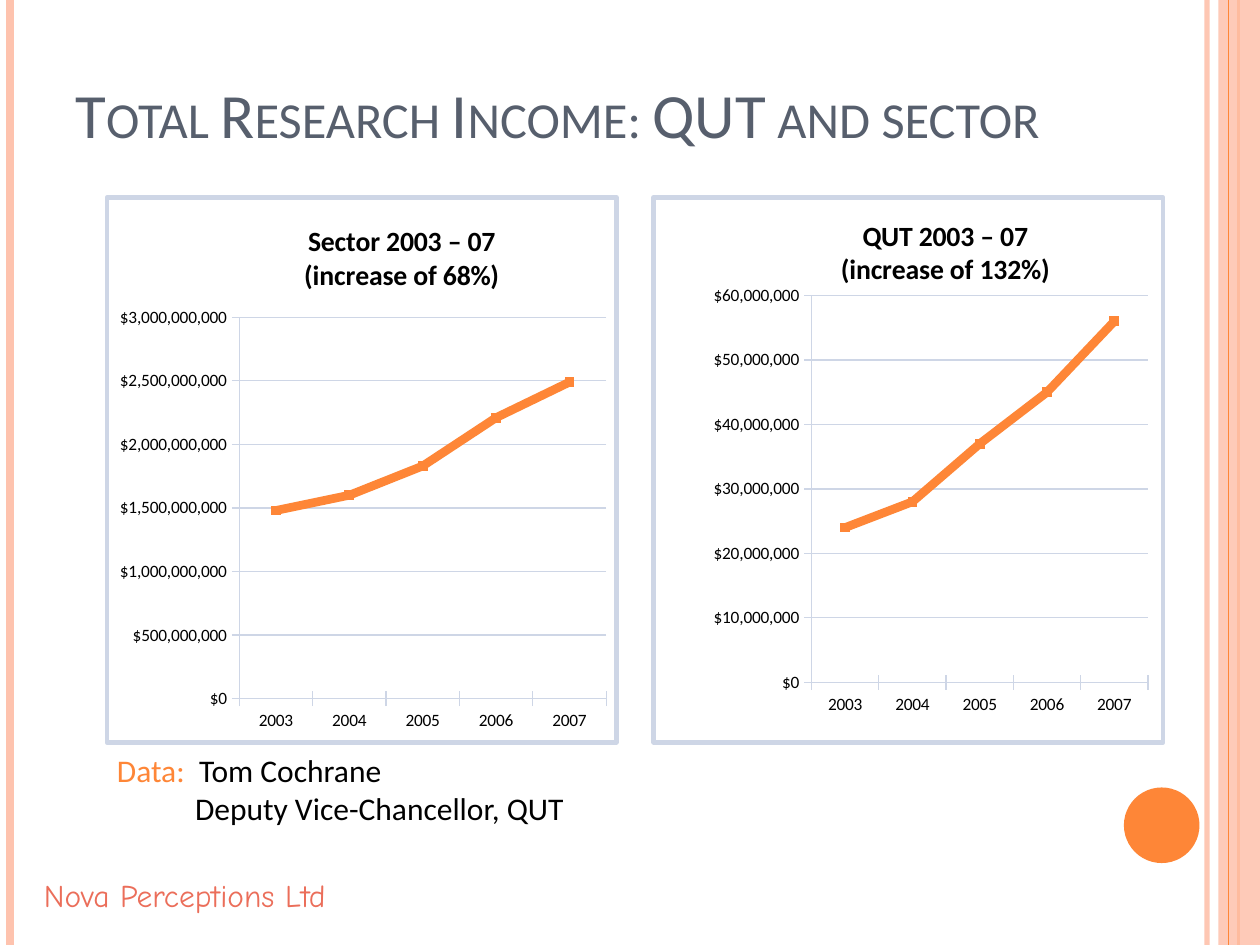
from dataclasses import dataclass

from lxml import etree
from pptx import Presentation
from pptx.chart.data import CategoryChartData
from pptx.dml.color import RGBColor
from pptx.enum.chart import XL_CHART_TYPE, XL_MARKER_STYLE, XL_TICK_MARK
from pptx.enum.shapes import MSO_CONNECTOR, MSO_SHAPE
from pptx.enum.text import MSO_ANCHOR
from pptx.oxml import parse_xml
from pptx.oxml.ns import nsdecls, qn
from pptx.util import Inches, Pt

LINE_MARKERS = XL_CHART_TYPE.LINE_MARKERS
SQUARE = XL_MARKER_STYLE.SQUARE
CROSS = XL_TICK_MARK.CROSS
STRAIGHT = MSO_CONNECTOR.STRAIGHT
RECT, OVAL = MSO_SHAPE.RECTANGLE, MSO_SHAPE.OVAL
TOP, BOTTOM = MSO_ANCHOR.TOP, MSO_ANCHOR.BOTTOM

WIDTH, HEIGHT = 10, 7.5
# Chart row: two equal columns
CHART_LEFT, CHART_TOP, CHART_W, CHART_H, GUTTER = 0.83, 1.55, 4.08, 4.36, 0.26
YEARS = ["2003", "2004", "2005", "2006", "2007"]


@dataclass(frozen=True)
class Theme:
    accent: str = "FE8637"
    pale: str = "FEC3AE"
    rule: str = "CED6E6"
    heading: str = "575F6D"
    text: str = "000000"
    footer: str = "EB6E5A"
    font: str = "Calibri"
    footer_font: str = "Comic Neue"
    heading_size: int = 36
    body_size: int = 18
    chart_title_size: int = 16
    chart_size: int = 10


THEME = Theme()


def rgb(color):
    return RGBColor.from_string(color)


def set_alpha(sp, percent):
    color = sp._element.spPr.find(".//" + qn("a:srgbClr"))
    etree.SubElement(color, qn("a:alpha"), val=str(percent * 1000))


def style_line(line, color, width):
    line.color.rgb = rgb(color)
    line.width = Pt(width)


def style_font(font, size, color, name=THEME.font, bold=False):
    font.size, font.name, font.bold = Pt(size), name, bold
    font.color.rgb = rgb(color)


def add_stripe(s, x, color, width, alpha=None):
    """Vertical line over the full slide height."""
    line = s.shapes.add_connector(STRAIGHT, Inches(x), 0, Inches(x), Inches(HEIGHT))
    style_line(line.line, color, width)
    if alpha:
        set_alpha(line, alpha)
    etree.SubElement(line._element.spPr, qn("a:effectLst"))


def add_block(s, kind, box, color):
    sp = s.shapes.add_shape(kind, *map(Inches, box))
    sp.shadow.inherit = False
    sp.fill.solid()
    sp.fill.fore_color.rgb = rgb(color)
    sp.line.fill.background()
    return sp


def add_text(s, box, lines, size, font=THEME.font, anchor=TOP):
    """Each line is a list of (text, color) runs."""
    tf = s.shapes.add_textbox(*map(Inches, box)).text_frame
    tf.word_wrap = True
    tf.vertical_anchor = anchor
    for i, runs in enumerate(lines):
        p = tf.add_paragraph() if i else tf.paragraphs[0]
        for text, color in runs:
            r = p.add_run()
            r.text = text
            style_font(r.font, size, color, font)
    return tf


def set_layout(parent, target, **shares):
    """Place a chart part by shares of the chart's size."""
    for old in parent.findall(qn("c:layout")):
        parent.remove(old)
    layout = etree.Element(qn("c:layout"))
    manual = etree.SubElement(layout, qn("c:manualLayout"))
    if target:
        etree.SubElement(manual, qn("c:layoutTarget"), val=target)
    for mode in ("xMode", "yMode"):
        etree.SubElement(manual, qn("c:" + mode), val="edge")
    for key, share in shares.items():
        etree.SubElement(manual, qn("c:" + key), val=str(share))
    text = parent.find(qn("c:tx"))
    if text is None:
        parent.insert(0, layout)
    else:
        text.addnext(layout)


def add_chart_title(chart, lines, x, y):
    tf = chart.chart_title.text_frame
    for i, text in enumerate(lines):
        p = tf.add_paragraph() if i else tf.paragraphs[0]
        r = p.add_run()
        r.text = text
        style_font(r.font, THEME.chart_title_size, THEME.text, bold=True)
    chart.chart_title.include_in_layout = False
    set_layout(chart.chart_title._element, None, x=x, y=y)


def add_income_chart(s, column, title, values, top, step, title_at, plot):
    data = CategoryChartData(number_format='"$"#,##0')
    data.categories = YEARS
    data.add_series("Series 1", values)
    left = CHART_LEFT + column * (CHART_W + GUTTER)
    box = map(Inches, (left, CHART_TOP, CHART_W, CHART_H))
    chart = s.shapes.add_chart(LINE_MARKERS, *box, data).chart
    chart.has_legend = False
    style_font(chart.font, THEME.chart_size, THEME.text)
    add_chart_title(chart, title, *title_at)
    set_layout(chart._chartSpace.chart.plotArea, "inner", **plot)

    # Axes and gridlines
    for axis in (chart.category_axis, chart.value_axis):
        axis.major_tick_mark = CROSS
        style_line(axis.format.line, THEME.rule, 0.75)
    axis = chart.value_axis
    axis.minimum_scale, axis.maximum_scale, axis.major_unit = 0, top, step
    axis.has_major_gridlines = True
    style_line(axis.major_gridlines.format.line, THEME.rule, 0.75)
    axis.tick_labels.number_format = '"$"#,##0'
    axis.tick_labels.number_format_is_linked = False

    # Series
    plot_area = chart.plots[0]
    plot_area.vary_by_categories = False
    series = plot_area.series[0]
    series.smooth = False
    style_line(series.format.line, THEME.accent, 5)
    series.marker.style, series.marker.size = SQUARE, 5
    series.marker.format.fill.solid()
    series.marker.format.fill.fore_color.rgb = rgb(THEME.accent)
    style_line(series.marker.format.line, THEME.accent, 0.75)

    # Frame around the chart
    chart._chartSpace.chart.addnext(parse_xml(
        f'<c:spPr {nsdecls("c", "a")}><a:noFill/><a:ln w="{Pt(2.5)}"><a:solidFill>'
        f'<a:srgbClr val="{THEME.rule}"/></a:solidFill></a:ln></c:spPr>'))


def add_decoration(s):
    add_stripe(s, 0.958 * WIDTH, THEME.pale, 3, alpha=93)
    add_stripe(s, 0.008 * WIDTH, THEME.pale, 4.5)
    add_stripe(s, 0.983 * WIDTH, THEME.accent, 1.5)
    band = add_block(s, RECT, (9.67, 0, 0.33, HEIGHT), THEME.pale)
    set_alpha(band, 87)
    add_stripe(s, 0.975 * WIDTH, THEME.accent, 0.75)
    add_block(s, OVAL, (8.92, 6.25, 0.6, 0.6), THEME.accent)


def main():
    prs = Presentation()
    prs.slide_width, prs.slide_height = Inches(WIDTH), Inches(HEIGHT)
    s = prs.slides.add_slide(prs.slide_layouts[6])
    add_decoration(s)

    # Heading in small capitals
    tf = add_text(s, (0.5, 0, 8.17, 1.25),
                  [[("Total Research Income: QUT and sector", THEME.heading)]],
                  THEME.heading_size, anchor=BOTTOM)
    tf.paragraphs[0].runs[0].font._element.set("cap", "small")

    # Charts
    add_income_chart(s, 1, ["QUT 2003 – 07", "(increase of 132%)"],
                     [24e6, 28e6, 37e6, 45e6, 56e6], 60e6, 10e6, (0.36, 0.03),
                     dict(x=0.31, y=0.18, w=0.66, h=0.71))
    add_income_chart(s, 0, ["Sector 2003 – 07", "(increase of 68%)"],
                     [1.48e9, 1.6e9, 1.83e9, 2.21e9, 2.49e9], 3e9, 0.5e9, (0.38, 0.04),
                     dict(x=0.26, y=0.22, w=0.72, h=0.7))

    # Source of the data, second line indented under the name
    tf = add_text(s, (0.83, 5.91, 4.5, 0.71),
                  [[("Data:  ", THEME.accent), ("Tom Cochrane", THEME.text)],
                   [("Deputy Vice-Chancellor, QUT", THEME.text)]], THEME.body_size)
    tf.paragraphs[1]._p.get_or_add_pPr().set("marL", str(Inches(0.62)))

    # Footer
    add_text(s, (0.25, 6.9, 3.07, 0.4), [[("Nova Perceptions Ltd", THEME.footer)]],
             THEME.body_size, THEME.footer_font)
    prs.save("out.pptx")


if __name__ == "__main__":
    main()
